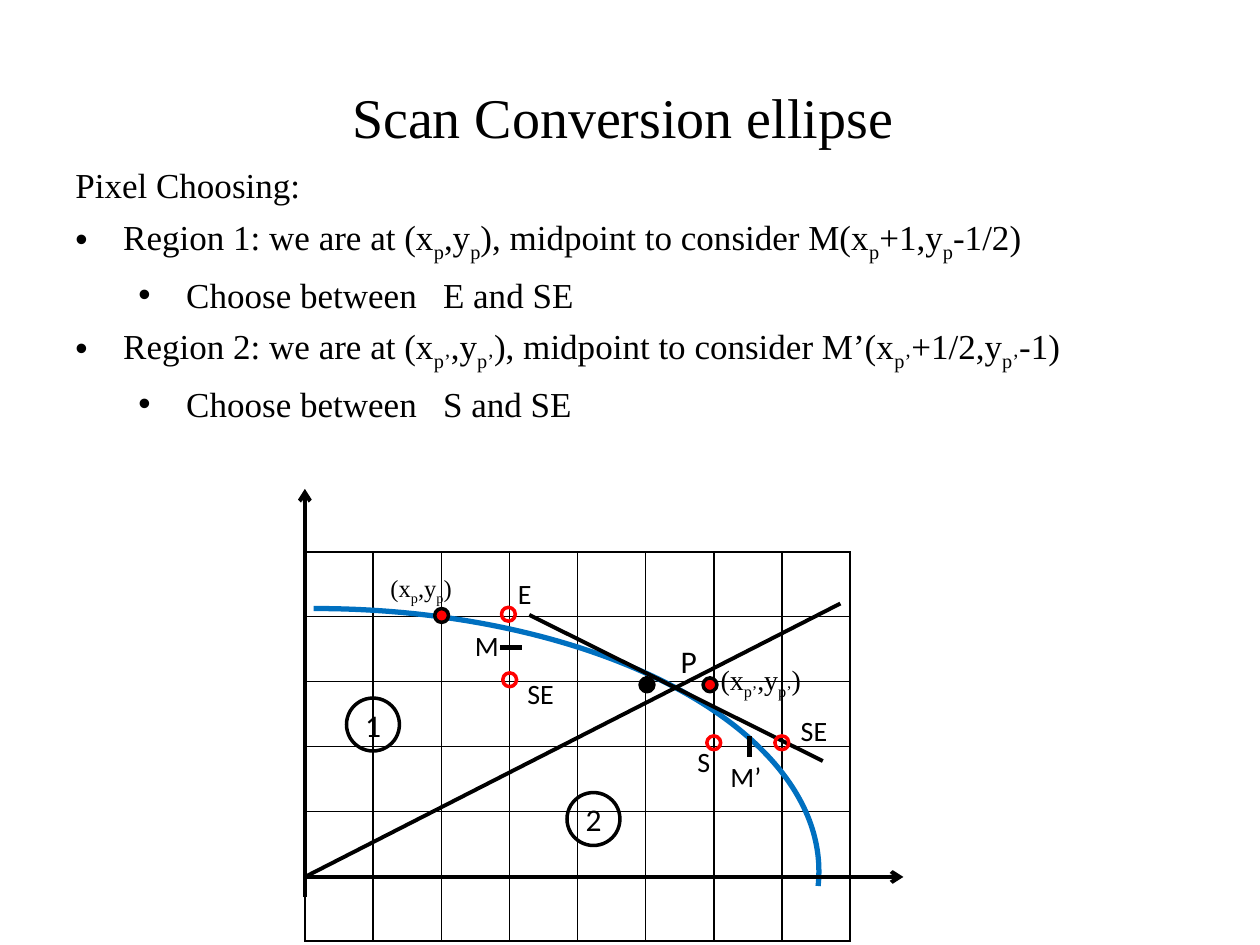
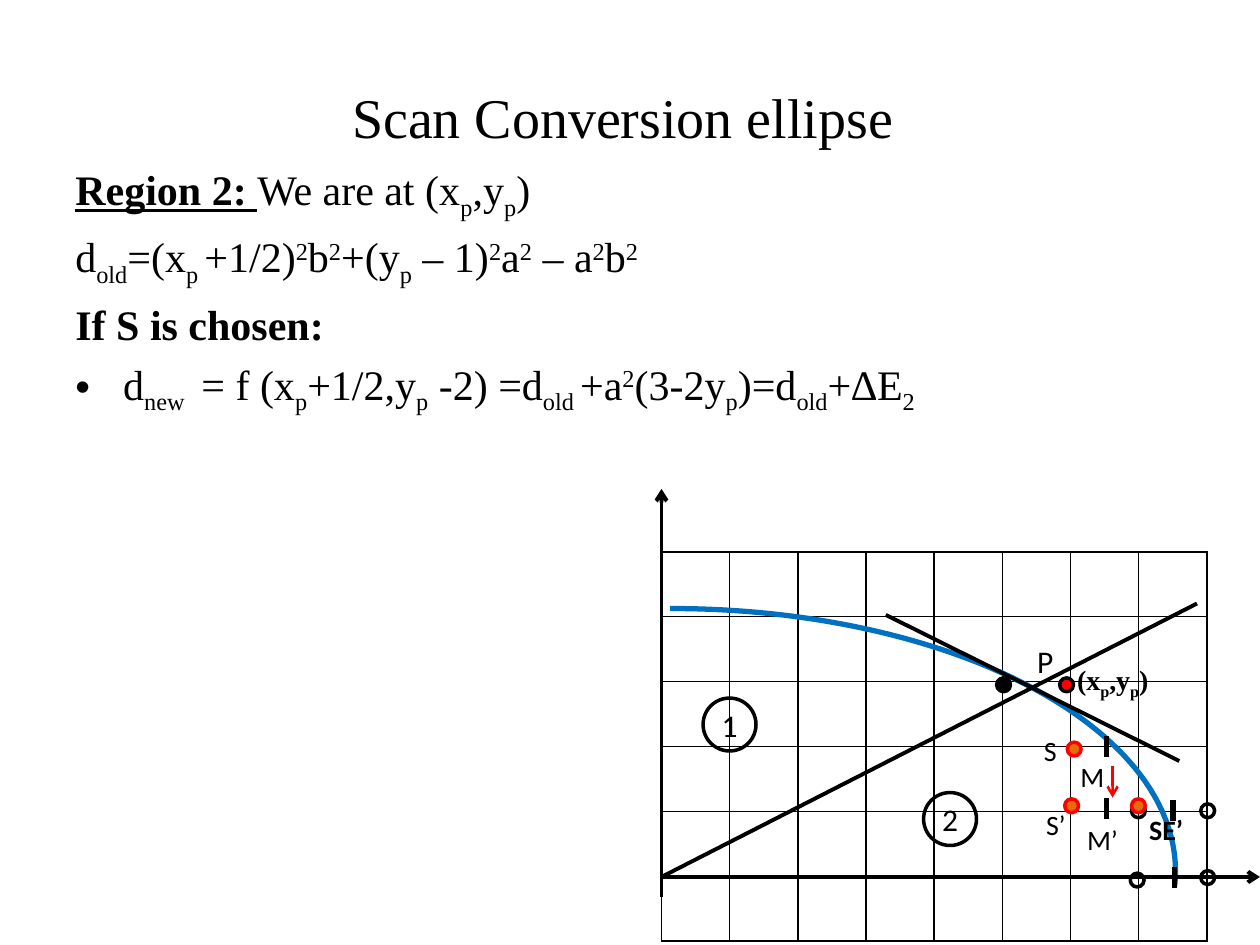
from pptx import Presentation
from pptx.dml.color import RGBColor
from pptx.enum.shapes import MSO_CONNECTOR, MSO_SHAPE
from pptx.enum.text import MSO_ANCHOR, PP_ALIGN
from pptx.oxml.ns import qn
from pptx.util import Inches, Pt
from lxml import etree

BLACK = RGBColor(0, 0, 0)
RED = RGBColor(0xFF, 0, 0)
BLUE = RGBColor(0, 0x70, 0xC0)
ORANGE = RGBColor(0xE4, 0x6C, 0x0A)
SERIF, SANS = "Times New Roman", "Calibri"
OVAL, ARC = MSO_SHAPE.OVAL, MSO_SHAPE.ARC
LINE = MSO_CONNECTOR.STRAIGHT
LEFT, CENTER = PP_ALIGN.LEFT, PP_ALIGN.CENTER
TOP, MIDDLE = MSO_ANCHOR.TOP, MSO_ANCHOR.MIDDLE
SHIFT = {"_": "-25000", "^": "30000"}
DOT, RING, TICK = 0.11, 0.42, 0.17


def node(parent, tag, **attrs):
    """Append a DrawingML element."""
    return etree.SubElement(parent, qn(tag), attrs)


def add_runs(para, text, size, font, bold=False):
    """Split text at bars; a piece led by _ is lowered, by ^ raised, by * a bold underlined lead."""
    for piece in text.split("|"):
        mark = piece[0] if piece[0] in "_^*" else ""
        run = para.add_run()
        run.text = piece[len(mark):]
        run.font.size, run.font.name = Pt(size), font
        run.font.color.rgb = BLACK
        run.font.bold = bold or mark == "*"
        run.font.underline = mark == "*"
        if mark in SHIFT:
            run.font._element.set("baseline", SHIFT[mark])


def add_box(slide, box, anchor=TOP, wrap=True):
    """Add a text box and return its frame."""
    frame = slide.shapes.add_textbox(*map(Inches, box)).text_frame
    frame.word_wrap, frame.vertical_anchor = wrap, anchor
    return frame


def add_title(slide):
    """Add the shared title."""
    para = add_box(slide, (0.5, 0.3, 9, 1.25), MIDDLE).paragraphs[0]
    para.alignment = CENTER
    add_runs(para, "Scan Conversion ellipse ", 32, SERIF)


def add_body(slide, rows, size):
    """Add body rows of (style, text): plain, bold, dot or sub."""
    frame = add_box(slide, (0.5, 1.25, 9, 5.45))
    for i, (style, text) in enumerate(rows):
        para = frame.add_paragraph() if i else frame.paragraphs[0]
        para.space_before = Pt(5.6)
        props = para._p.get_or_add_pPr()
        props.set("marL", str(Inches(0.88 if style == "sub" else 0.38)))
        props.set("indent", str(Inches(-0.38)))
        if style in ("dot", "sub"):
            node(props, "a:buFont", typeface="Arial")
            node(props, "a:buChar", char="•")
        add_runs(para, text, size, SERIF, style == "bold")


class Figure:
    """A drawing whose parts are placed from its own top left corner."""

    def __init__(self, slide, left, top):
        """Keep the slide and the corner."""
        self.slide, self.left, self.top = slide, left, top

    def place(self, x, y):
        """Turn a point of the figure into slide lengths."""
        return Inches(self.left + x), Inches(self.top + y)

    def shape(self, kind, x, y, w, h, color, width=2, fill=None):
        """Add an outlined preset shape."""
        item = self.slide.shapes.add_shape(kind, *self.place(x, y), Inches(w), Inches(h))
        item.shadow.inherit = False
        item.line.color.rgb, item.line.width = color, Pt(width)
        if fill is None:
            item.fill.background()
        else:
            item.fill.solid()
            item.fill.fore_color.rgb = fill
        return item

    def line(self, start, end, width=2.25, color=BLACK, arrow=False):
        """Add a line, with an arrowhead at its end if asked."""
        item = self.slide.shapes.add_connector(LINE, *self.place(*start), *self.place(*end))
        item.line.color.rgb, item.line.width = color, Pt(width)
        if arrow:
            node(item.line._get_or_add_ln(), "a:tailEnd", type="arrow")
        node(item._element.spPr, "a:effectLst")

    def dots(self, points, color, fill=None):
        """Add one pixel circle at each point."""
        for x, y in points:
            self.shape(OVAL, x, y, DOT, DOT, color, fill=fill)

    def ticks(self, points):
        """Add upright midpoint marks, given their tops."""
        for x, y in points:
            self.line((x, y), (x, y + TICK), 3)

    def label(self, text, x, y, w, h=0.25, size=16, bold=False):
        """Add a centred letter label."""
        para = add_box(self.slide, (self.left + x, self.top + y, w, h), MIDDLE, False).paragraphs[0]
        para.alignment = CENTER
        add_runs(para, text, size, SANS, bold)

    def point(self, text, x, y, w, size=16, bold=False):
        """Add the coordinates of a pixel."""
        para = add_box(self.slide, (self.left + x, self.top + y, w, 0.37)).paragraphs[0]
        para.alignment = LEFT
        add_runs(para, text, size, SERIF, bold)

    def grid(self, cols=8, rows=6, w=4.33, h=3.09):
        """Add the pixel grid as an empty table."""
        frame = self.slide.shapes.add_table(rows, cols, *self.place(0, 0.5), Inches(w), Inches(h))
        table = frame.table
        table.first_row = table.horz_banding = False
        for col in table.columns:
            col.width = Inches(w / cols)
        for row in table.rows:
            row.height = Inches(h / rows)
        for cell in table.iter_cells():
            props = cell._tc.get_or_add_tcPr()
            for side in "LRTB":
                edge = node(props, "a:ln" + side, w=str(Pt(1)))
                node(node(edge, "a:solidFill"), "a:srgbClr", val=str(BLACK))
            cell.fill.background()

    def base(self):
        """Draw what both figures share: grid, ellipse, axes, tangent and regions."""
        self.grid()
        arc = self.shape(ARC, -3.92, 0.95, 8, 4.17, BLUE, 3)
        arc.adjustments[0], arc.adjustments[1] = 161.83, 1.01
        self.line((0, 3.08), (4.75, 3.08), arrow=True)
        self.line((0, 3.24), (0, 0), arrow=True)
        self.line((0, 3.08), (4.25, 0.91))
        self.line((1.78, 1), (4.11, 2.16))
        self.dots([(2.66, 1.5)], BLACK, BLACK)
        self.dots([(3.16, 1.5)], BLACK, RED)
        for text, x, y in (("1", 0.33, 1.66), ("2", 2.08, 2.41)):
            self.shape(OVAL, x, y, RING, RING, BLACK)
            self.label(text, x, y, RING, RING, 18)
        self.label("P", 2.91, 1.24, 0.17, size=18)


def draw_choice(fig):
    """Draw the candidate pixels of both regions."""
    fig.base()
    fig.dots([(1.56, 0.94), (1.57, 1.46), (3.19, 1.96), (3.73, 1.96)], RED)
    fig.dots([(1.03, 0.95)], BLACK, RED)
    fig.line((1.55, 1.26), (1.55 + TICK, 1.26), 3)
    fig.ticks([(3.53, 1.96)])
    fig.label("E", 1.58, 0.7, 0.33)
    fig.label("SE", 1.66, 1.54, 0.42, 0.17)
    fig.label("M", 1.25, 1.12, 0.33)
    fig.label("S", 3, 2.04, 0.33)
    fig.label("SE", 3.83, 1.79, 0.42)
    fig.label("M’", 3.25, 2.12, 0.5, 0.33)
    fig.point("(x|_p|,y|_p|)", 0.58, 0.62, 0.75, 14)
    fig.point("(x|_p’|,y|_p’|)", 3.2, 1.33, 0.88)


def draw_south(fig):
    """Draw the step to the south in region 2."""
    fig.base()
    fig.dots([(3.73, 2.5), (3.72, 3.05), (4.28, 3.03), (4.28, 2.5)], BLACK)
    fig.dots([(3.2, 2.46), (3.73, 2.46), (3.22, 2.01)], RED, ORANGE)
    fig.ticks([(3.53, 1.96), (3.53, 2.45), (4.06, 2.47), (4.07, 3)])
    fig.label("S", 2.92, 1.95, 0.33)
    fig.label("S’", 2.92, 2.54, 0.42)
    fig.label("SE’", 3.67, 2.54, 0.67, 0.33, bold=True)
    fig.label("M", 3.17, 2.12, 0.5, 0.33)
    fig.label("M’", 3.25, 2.62, 0.5, 0.33)
    fig.point("(x|_p|,y|_p|)", 3.2, 1.33, 0.8, bold=True)
    fig.line((3.58, 2.2), (3.58, 2.45), 1.5, RED, True)


CHOICE = [
    ("plain", "Pixel Choosing:"),
    ("dot", "Region 1: we are at (x|_p|,y|_p|), midpoint to consider M(x|_p|+1,y|_p|-1/2)"),
    ("sub", "Choose between   E and SE"),
    ("dot", "Region 2: we are at (x|_p’|,y|_p’|), midpoint to consider M’(x|_p’|+1/2,y|_p’|-1)"),
    ("sub", "Choose between   S and SE"),
]
SOUTH = [
    ("plain", "*Region 2: |We are at (x|_p|,y|_p|)"),
    ("plain", "d|_old|=(x|_p |+1/2)|^2|b|^2|+(y|_p| – 1)|^2|a|^2| – a|^2|b|^2"),
    ("bold", "If S is chosen:"),
    ("dot", "d|_new | = f (x|_p|+1/2,y|_p| -2) =d|_old |+a|^2|(3-2y|_p|)=d|_old|+∆E|_2"),
]


def main():
    """Build both slides and save them."""
    deck = Presentation()
    deck.slide_width, deck.slide_height = Inches(10), Inches(7.5)
    for rows, size, draw, left in ((CHOICE, 20, draw_choice, 2.42), (SOUTH, 24, draw_south, 5.25)):
        slide = deck.slides.add_slide(deck.slide_layouts[6])
        add_title(slide)
        add_body(slide, rows, size)
        draw(Figure(slide, left, 3.88))
    deck.save("out.pptx")


if __name__ == "__main__":
    main()
